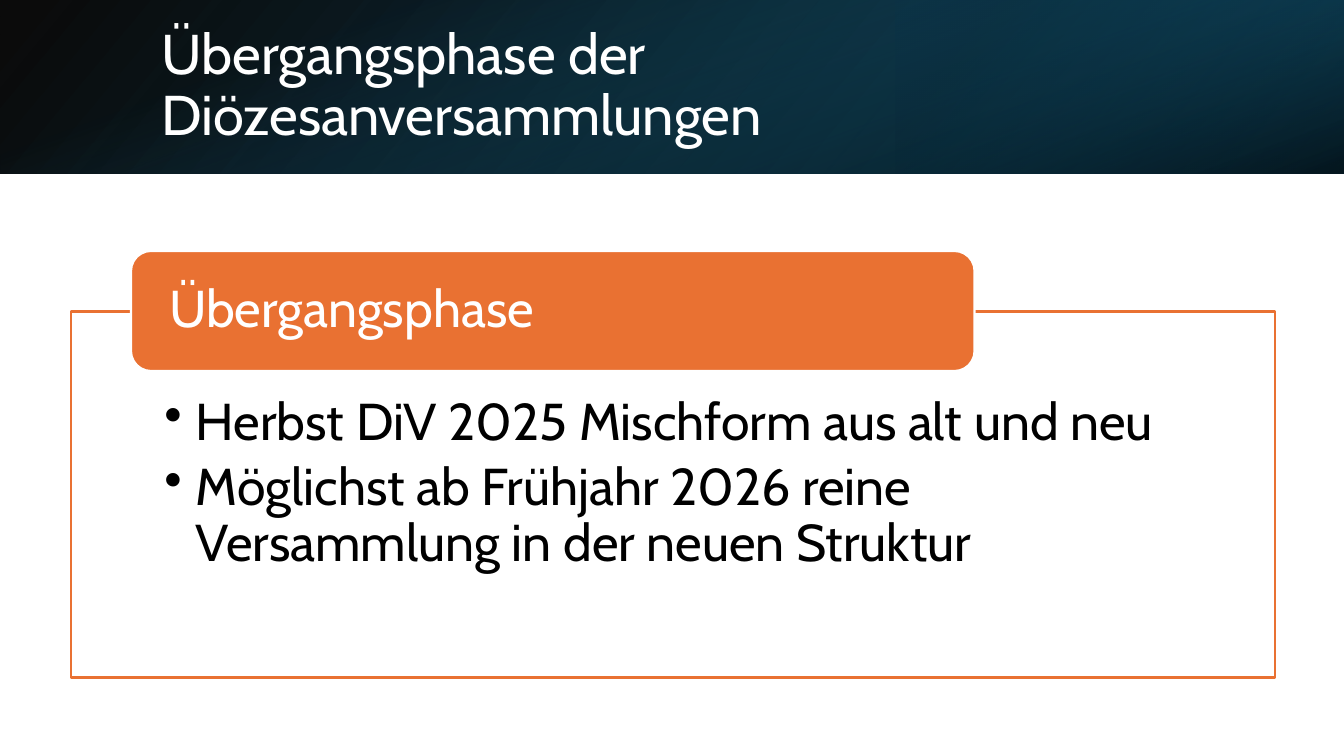
import pptx
import pptx.util
import pptx.dml.color
import pptx.enum.shapes
import pptx.enum.text
import pptx.oxml
import pptx.oxml.ns

Pt = pptx.util.Pt
SHAPES = pptx.enum.shapes.MSO_SHAPE
ANCHOR = pptx.enum.text.MSO_ANCHOR
FONT = "Cabin"
ORANGE, WHITE, BLACK = "E97132", "FFFFFF", "000000"


def colour(value):
    return pptx.dml.color.RGBColor.from_string(value)


def add_box(page, kind, left, top, width, height):
    box = page.shapes.add_shape(kind, Pt(left), Pt(top), Pt(width), Pt(height))
    box.shadow.inherit = False
    return box


def add_gradient_band(page, place, stops, angle, rotation=0, flip=False):
    """Stops are (position, colour, opacity), both numbers in percent."""
    band = add_box(page, SHAPES.RECTANGLE, *place)
    band.line.fill.background()
    band.rotation = rotation
    properties = band._element.spPr
    if flip:
        properties.xfrm.set("flipH", "1")
    marks = "".join(
        f'<a:gs pos="{position * 1000}"><a:srgbClr val="{value}">'
        f'<a:alpha val="{opacity * 1000}"/></a:srgbClr></a:gs>'
        for position, value, opacity in stops)
    gradient = pptx.oxml.parse_xml(
        f'<a:gradFill {pptx.oxml.ns.nsdecls("a")} rotWithShape="1"><a:gsLst>{marks}</a:gsLst>'
        f'<a:lin ang="{angle * 60000}" scaled="0"/></a:gradFill>')
    properties.prstGeom.addnext(gradient)


def add_panel(page, kind, place, fill, line):
    panel = add_box(page, kind, *place)
    panel.fill.solid()
    panel.fill.fore_color.rgb = colour(fill)
    panel.line.color.rgb = colour(line)
    panel.line.width = Pt(1.5)
    return panel


def write_text(box, lines, size, value, anchor, insets, space_after=0, bullet=False):
    frame = box.text_frame
    frame.word_wrap = True
    frame.auto_size = pptx.enum.text.MSO_AUTO_SIZE.NONE
    frame.vertical_anchor = anchor
    frame.margin_left = frame.margin_right = Pt(insets[0])
    frame.margin_top, frame.margin_bottom = Pt(insets[1]), Pt(insets[2])
    frame.text = "\n".join(lines)
    for para in frame.paragraphs:
        para.alignment = pptx.enum.text.PP_ALIGN.LEFT
        para.line_spacing = 0.9
        para.space_after = Pt(space_after)
        para.font.name = FONT
        para.font.size = Pt(size)
        para.font.color.rgb = colour(value)
        if bullet:
            add_bullet(para, 22.5)


def add_bullet(para, indent):
    properties = para._p.get_or_add_pPr()
    properties.set("marL", str(Pt(indent)))
    properties.set("indent", str(-Pt(indent)))
    mark = pptx.oxml.parse_xml(f'<a:buChar {pptx.oxml.ns.nsdecls("a")} char="•"/>')
    properties.find(pptx.oxml.ns.qn("a:defRPr")).addprevious(mark)


def main():
    deck = pptx.Presentation()
    deck.slide_width, deck.slide_height = Pt(960), Pt(540)
    page = deck.slides.add_slide(deck.slide_layouts[5])
    title = page.shapes.title

    # Header: three layered gradients
    add_gradient_band(page, (0, 0, 960, 124),
                      [(0, BLACK, 96), (100, "104862", 100)], 140, flip=True)
    add_gradient_band(page, (640, 0, 320, 124),
                      [(19, "0B3041", 68), (100, "156082", 79)], 320, rotation=180, flip=True)
    add_gradient_band(page, (418, -418, 124, 960),
                      [(23, "156082", 0), (99, BLACK, 74)], 340, rotation=90)

    # Title, brought in front of the header
    title.left, title.top, title.width, title.height = Pt(108), Pt(27.4), Pt(790.5), Pt(69)
    write_text(title, ["Übergangsphase der Diözesanversammlungen"], 40, WHITE,
               ANCHOR.MIDDLE, (7.2, 3.6, 3.6))
    page.shapes._spTree.append(title._element)

    # Framed list
    frame = add_panel(page, SHAPES.RECTANGLE, (50.4, 222.5, 860.5, 261.5), WHITE, ORANGE)
    write_text(frame, ["Herbst DiV 2025 Mischform aus alt und neu",
                       "Möglichst ab Frühjahr 2026 reine Versammlung in der neuen Struktur"],
               37, BLACK, ANCHOR.TOP, (67, 60.5, 21), space_after=6.5, bullet=True)

    # Heading tab on the frame's upper edge
    tab = add_panel(page, SHAPES.ROUNDED_RECTANGLE, (93.6, 179.3, 602.5, 85.7), ORANGE, WHITE)
    write_text(tab, ["Übergangsphase"], 37, WHITE, ANCHOR.MIDDLE, (23, 0, 0))

    deck.save("out.pptx")


if __name__ == "__main__":
    main()
